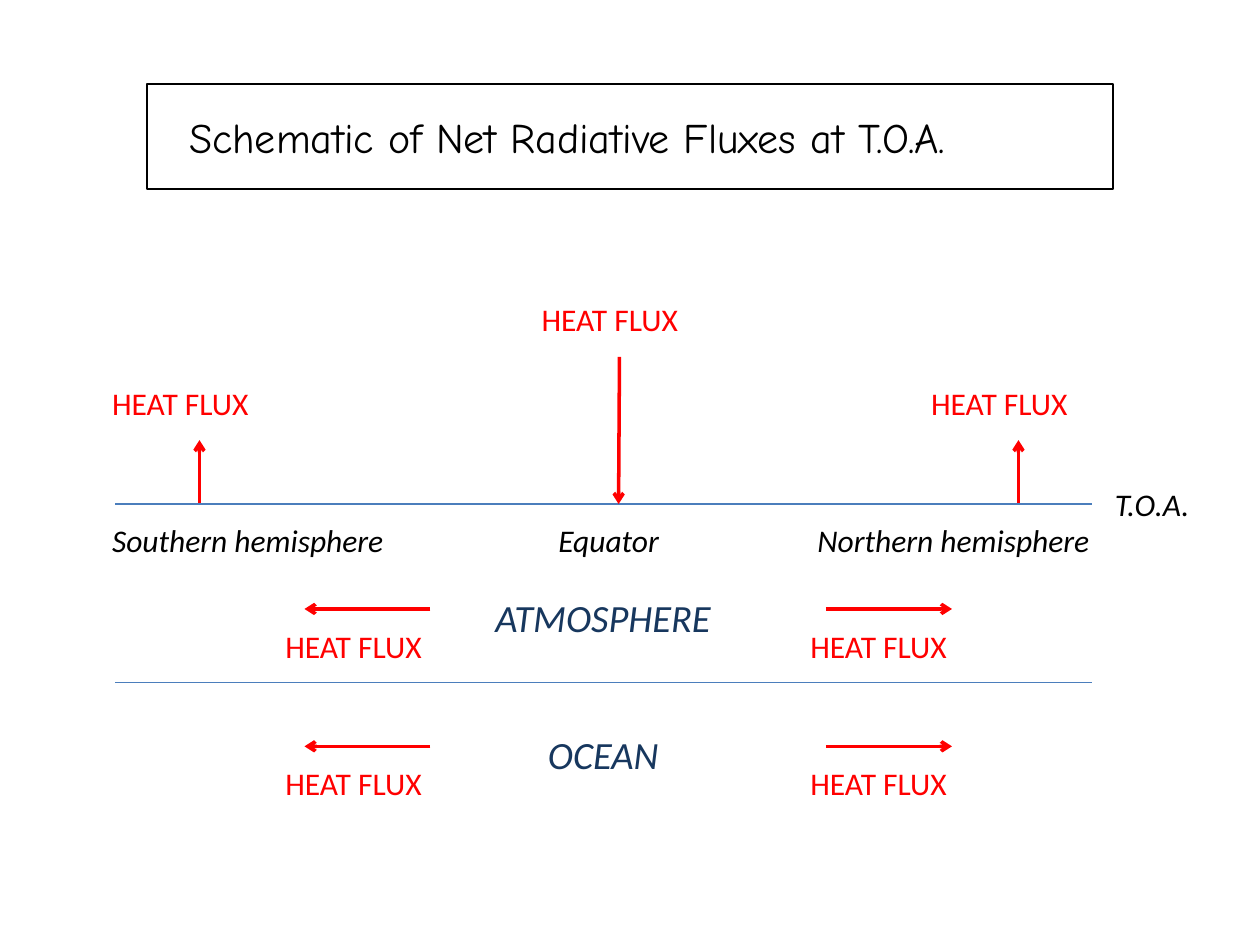
from lxml.etree import SubElement
from pptx import Presentation
from pptx.dml.color import RGBColor
from pptx.enum.shapes import MSO_CONNECTOR, MSO_SHAPE
from pptx.enum.text import MSO_ANCHOR, MSO_AUTO_SIZE, PP_ALIGN
from pptx.oxml.ns import qn
from pptx.util import Pt

RED, BLUE, NAVY, BLACK = "FF0000", "4B7EBC", "17375E", "000000"

deck = Presentation()
deck.slide_width, deck.slide_height = Pt(720), Pt(540)
page = deck.slides.add_slide(deck.slide_layouts[5])


def add_line(x1, y1, x2, y2, color, width, arrow=False):
    line = page.shapes.add_connector(
        MSO_CONNECTOR.STRAIGHT, Pt(x1), Pt(y1), Pt(x2), Pt(y2))
    line.line.color.rgb = RGBColor.from_string(color)
    line.line.width = Pt(width)
    if arrow:
        SubElement(line.line._get_or_add_ln(), qn("a:tailEnd"), type="arrow")
    SubElement(line._element.spPr, qn("a:effectLst"))


def add_label(text, left, top, width, color, size=18, italic=True):
    height = 28.8 if size == 18 else 33.8
    box = page.shapes.add_textbox(Pt(left), Pt(top), Pt(width), Pt(height))
    box.text_frame.word_wrap = False
    para = box.text_frame.paragraphs[0]
    para.text = text
    para.font.name = "Calibri"
    para.font.size = Pt(size)
    para.font.italic = italic
    para.font.color.rgb = RGBColor.from_string(color)


# Title and its frame
title = page.shapes.title
title.left, title.top, title.width, title.height = Pt(100.8), Pt(60), Pt(518.4), Pt(36)
frame = title.text_frame
frame.text = "Schematic of Net Radiative Fluxes at T.O.A."
frame.word_wrap = False
frame.auto_size = MSO_AUTO_SIZE.NONE
frame.vertical_anchor = MSO_ANCHOR.TOP
para = frame.paragraphs[0]
para.alignment = PP_ALIGN.LEFT
para.font.name = "Comic Neue"
para.font.size = Pt(24)
para.font.color.rgb = RGBColor.from_string(BLACK)

border = page.shapes.add_shape(MSO_SHAPE.RECTANGLE, Pt(84), Pt(48), Pt(552), Pt(60))
border.shadow.inherit = False
border.fill.background()
border.line.color.rgb = RGBColor.from_string(BLACK)
border.line.width = Pt(1)

# Top of the atmosphere and ocean surface
for y in (288, 390):
    add_line(66, y, 624, y, BLUE, 0.75)

# Vertical fluxes: in at the equator, out at both hemispheres
add_line(354, 204, 353.5, 288, RED, 2, arrow=True)
add_label("HEAT FLUX", 302.4, 168, 117, RED, italic=False)
for arrow_x, label_left in ((114, 57), (582, 525)):
    add_line(arrow_x, 287.5, arrow_x, 251.5, RED, 2, arrow=True)
    add_label("HEAT FLUX", label_left, 216, 117, RED, italic=False)

# Poleward fluxes in the atmosphere and the ocean
for y in (348, 426.5):
    for start, end, label_left in ((246, 174, 156), (472, 544, 456)):
        add_line(start, y, end, y, RED, 2, arrow=True)
        add_label("HEAT FLUX", label_left, y + 6.5, 117, RED, italic=False)

# Place names
for text, left, top, width in (
    ("Southern hemisphere", 57, 294, 171.5),
    ("Equator", 312, 294, 74),
    ("Northern hemisphere", 460, 294, 175.5),
    ("T.O.A.", 630, 273.5, 57.5),
):
    add_label(text, left, top, width, BLACK)

# Layer names
add_label("ATMOSPHERE", 276, 336, 156, NAVY, size=22)
add_label("OCEAN", 306, 414, 87, NAVY, size=22)

deck.save("out.pptx")
